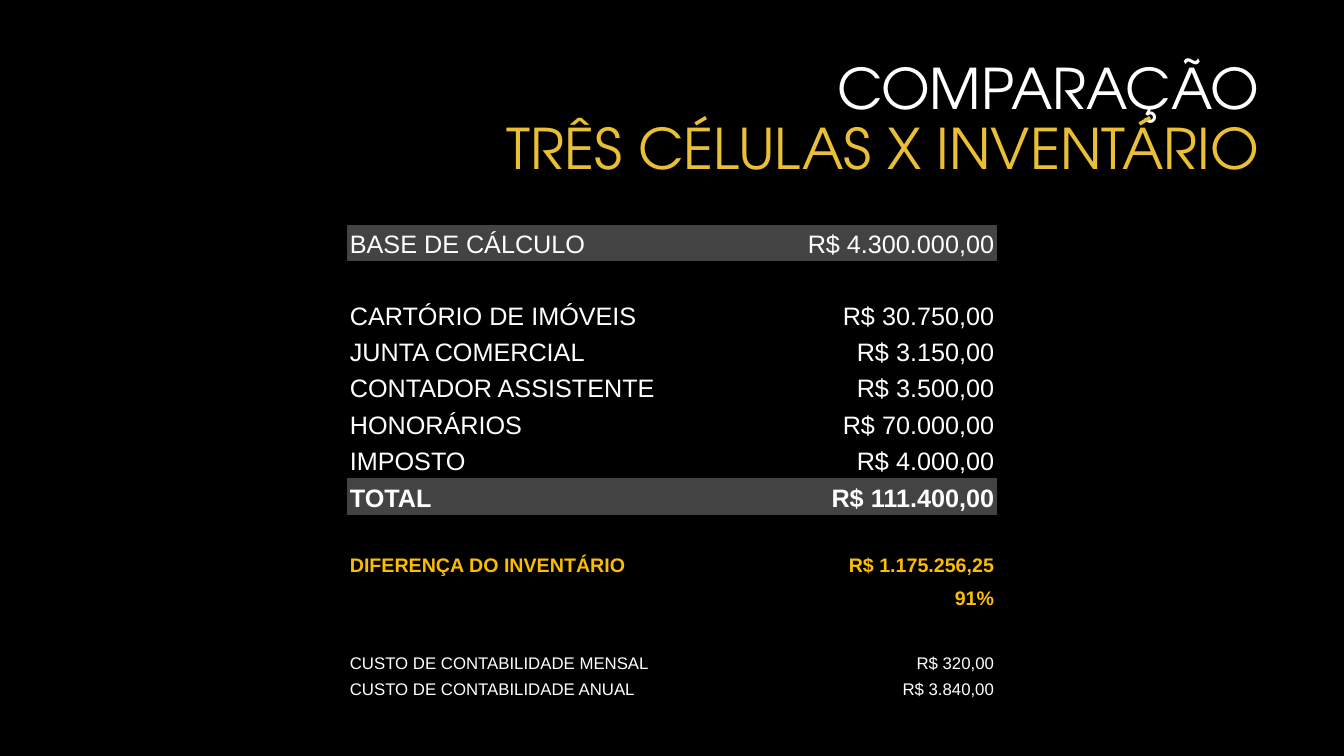
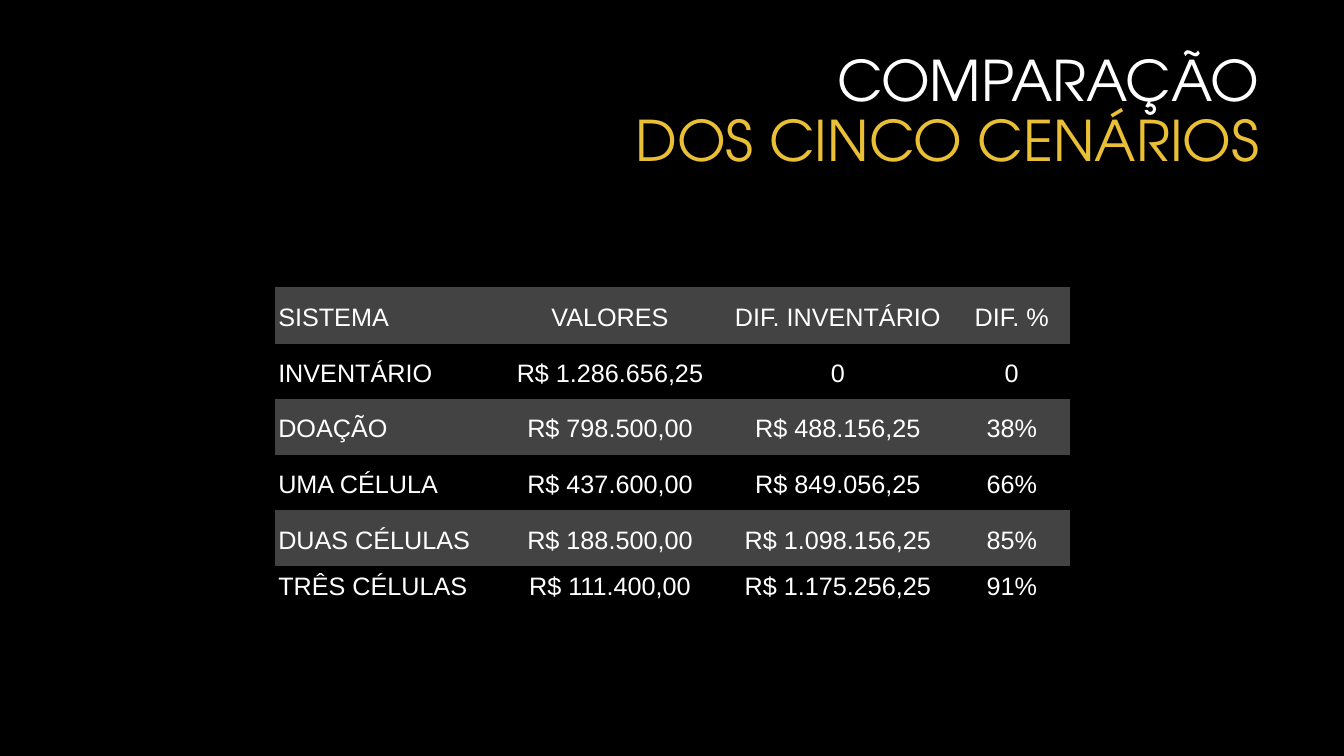
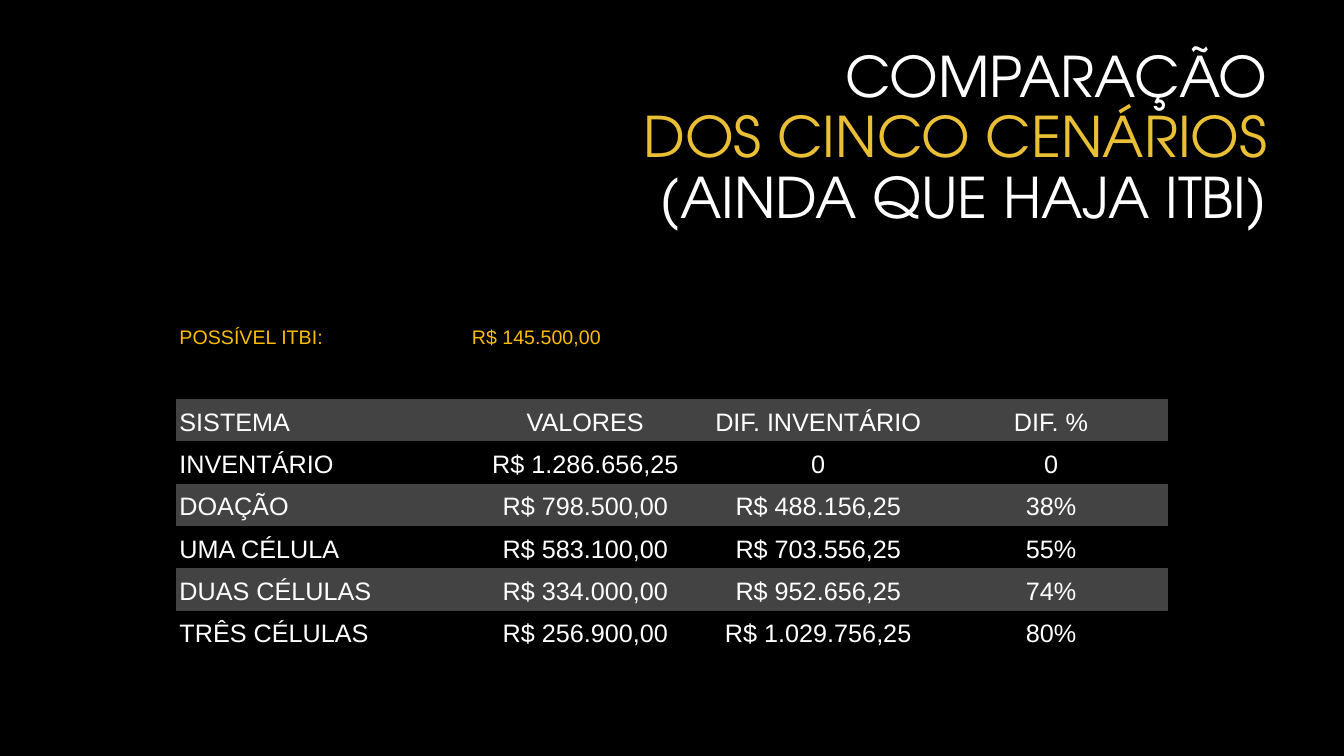
import collections

import pptx
import pptx.dml.color
import pptx.enum.text
import pptx.oxml.ns
import pptx.util

Inches = pptx.util.Inches
Pt = pptx.util.Pt
ALIGN = pptx.enum.text.PP_ALIGN
MIDDLE = pptx.enum.text.MSO_ANCHOR.MIDDLE

BLACK, WHITE, GRAY = "000000", "FFFFFF", "434343"
GOLD, AMBER = "E9BF35", "FBBC04"
TITLE_FONT, TABLE_FONT = "TeX Gyre Adventor", "Arial"
TITLE_SIZE = 40
NO_STYLE_NO_GRID = "{2D5ABB26-0587-4C30-8999-92F81FD0307C}"

RowStyle = collections.namedtuple("RowStyle", "size color bold fill")
PLAIN = RowStyle(18, WHITE, False, BLACK)
BAND = RowStyle(18, WHITE, False, GRAY)
TOTAL = RowStyle(18, WHITE, True, GRAY)
DIFFERENCE = RowStyle(14, AMBER, True, BLACK)
TAX = RowStyle(14, AMBER, False, BLACK)
SMALL = RowStyle(12, WHITE, False, BLACK)

COST_ROWS = [
    (BAND, 0.36, ["BASE DE CÁLCULO", "R$ 4.300.000,00"]),
    (PLAIN, 0.33, ["", ""]),
    (PLAIN, 0.36, ["CARTÓRIO DE IMÓVEIS", "R$ 30.750,00"]),
    (PLAIN, 0.36, ["JUNTA COMERCIAL", "R$ 3.150,00"]),
    (PLAIN, 0.36, ["CONTADOR ASSISTENTE", "R$ 3.500,00"]),
    (PLAIN, 0.36, ["HONORÁRIOS", "R$ 70.000,00"]),
    (PLAIN, 0.36, ["IMPOSTO", "R$ 4.000,00"]),
    (TOTAL, 0.36, ["TOTAL", "R$ 111.400,00"]),
    (PLAIN, 0.33, ["", ""]),
    (DIFFERENCE, 0.3, ["DIFERENÇA DO INVENTÁRIO", "R$ 1.175.256,25"]),
    (DIFFERENCE, 0.3, ["", "91%"]),
    (PLAIN, 0.33, ["", ""]),
    (SMALL, 0.26, ["CUSTO DE CONTABILIDADE MENSAL", "R$ 320,00"]),
    (SMALL, 0.26, ["CUSTO DE CONTABILIDADE ANUAL", "R$ 3.840,00"]),
]
SHARED_SCENARIOS = [
    ["SISTEMA", "VALORES", "DIF. INVENTÁRIO", "DIF. %"],
    ["INVENTÁRIO", "R$ 1.286.656,25", "0", "0"],
    ["DOAÇÃO", "R$ 798.500,00", "R$ 488.156,25", "38%"],
]
SCENARIOS = SHARED_SCENARIOS + [
    ["UMA CÉLULA", "R$ 437.600,00", "R$ 849.056,25", "66%"],
    ["DUAS CÉLULAS", "R$ 188.500,00", "R$ 1.098.156,25", "85%"],
    ["TRÊS CÉLULAS", "R$ 111.400,00", "R$ 1.175.256,25", "91%"],
]
SCENARIOS_WITH_TAX = SHARED_SCENARIOS + [
    ["UMA CÉLULA", "R$ 583.100,00", "R$ 703.556,25", "55%"],
    ["DUAS CÉLULAS", "R$ 334.000,00", "R$ 952.656,25", "74%"],
    ["TRÊS CÉLULAS", "R$ 256.900,00", "R$ 1.029.756,25", "80%"],
]
TAX_ROWS = [
    (TAX, 0.42, ["POSSÍVEL ITBI:", "R$ 145.500,00", "", ""]),
    (PLAIN, 0.42, ["", "", "", ""]),
]


def rgb(color):
    return pptx.dml.color.RGBColor.from_string(color)


def format_run(span, font, size, color, bold=False):
    span.font.name = font
    span.font.size = Pt(size)
    span.font.color.rgb = rgb(color)
    span.font.bold = bold


def start_deck():
    deck = pptx.Presentation()
    deck.slide_width, deck.slide_height = Inches(13.33), Inches(7.5)
    master = deck.slide_master
    master.background.fill.solid()
    master.background.fill.fore_color.rgb = rgb(BLACK)
    title_style = next(master.element.iter(pptx.oxml.ns.qn("p:titleStyle")))
    for defaults in title_style.iter(pptx.oxml.ns.qn("a:defRPr")):
        defaults.set("sz", str(TITLE_SIZE * 100))
    return deck


def add_titled_page(deck, lines, left, top, height):
    page = deck.slides.add_slide(deck.slide_layouts.get_by_name("Title Only"))
    title = page.shapes.title
    title.left, title.top = Inches(left), Inches(top)
    title.width, title.height = Inches(9.42), Inches(height)
    frame = title.text_frame
    frame.text = "\v".join(lines)
    frame.word_wrap = True
    frame.auto_size = pptx.enum.text.MSO_AUTO_SIZE.NONE
    frame.vertical_anchor = MIDDLE
    para = frame.paragraphs[0]
    para.alignment = ALIGN.RIGHT
    para.line_spacing = 0.9
    for index, span in enumerate(para.runs):
        format_run(span, TITLE_FONT, TITLE_SIZE, GOLD if index == 1 else WHITE)
    return page


def fill_cell(cell, text, style, alignment):
    cell.fill.solid()
    cell.fill.fore_color.rgb = rgb(style.fill)
    cell.margin_left = cell.margin_right = Inches(0.03)
    cell.margin_top = cell.margin_bottom = Inches(0.02)
    cell.vertical_anchor = MIDDLE
    if text:
        cell.text_frame.text = text
        para = cell.text_frame.paragraphs[0]
        para.alignment = alignment
        para.line_spacing = 1.15
        format_run(para.runs[0], TABLE_FONT, style.size, style.color, style.bold)


def add_value_table(page, left, top, widths, rows, value_alignment):
    frame = page.shapes.add_table(
        len(rows), len(widths), Inches(left), Inches(top),
        Inches(sum(widths)), Inches(sum(height for _, height, _ in rows)))
    next(frame.element.iter(pptx.oxml.ns.qn("a:tableStyleId"))).text = NO_STYLE_NO_GRID
    table = frame.table
    table.first_row = table.horz_banding = False
    for column, width in zip(table.columns, widths):
        column.width = Inches(width)
    for row, (style, height, texts) in zip(table.rows, rows):
        row.height = Inches(height)
        for index, (cell, text) in enumerate(zip(row.cells, texts)):
            left_aligned = index == 0 or style is TAX
            fill_cell(cell, text, style, ALIGN.LEFT if left_aligned else value_alignment)


def banded(scenarios, heights):
    return [(PLAIN if index % 2 else BAND, height, texts)
            for index, (height, texts) in enumerate(zip(heights, scenarios))]


def main():
    deck = start_deck()

    page = add_titled_page(deck, ["COMPARAÇÃO", "TRÊS CÉLULAS X INVENTÁRIO"], 3.17, 0.5, 1.41)
    add_value_table(page, 3.44, 2.23, [4.12, 2.33], COST_ROWS, ALIGN.RIGHT)

    page = add_titled_page(deck, ["COMPARAÇÃO", "DOS CINCO CENÁRIOS"], 3.17, 0.42, 1.41)
    heights = [0.56, 0.55, 0.55, 0.55, 0.56, 0.36]
    add_value_table(page, 2.73, 2.85, [2.21, 2.22, 2.3, 1.15],
                    banded(SCENARIOS, heights), ALIGN.CENTER)

    page = add_titled_page(
        deck, ["COMPARAÇÃO", "DOS CINCO CENÁRIOS", "(AINDA QUE HAJA ITBI)"], 3.25, 0.39, 1.99)
    add_value_table(page, 1.75, 3.12, [2.9] + [2.31] * 3,
                    TAX_ROWS + banded(SCENARIOS_WITH_TAX, [0.42] * 6), ALIGN.CENTER)

    deck.save("out.pptx")


if __name__ == "__main__":
    main()
